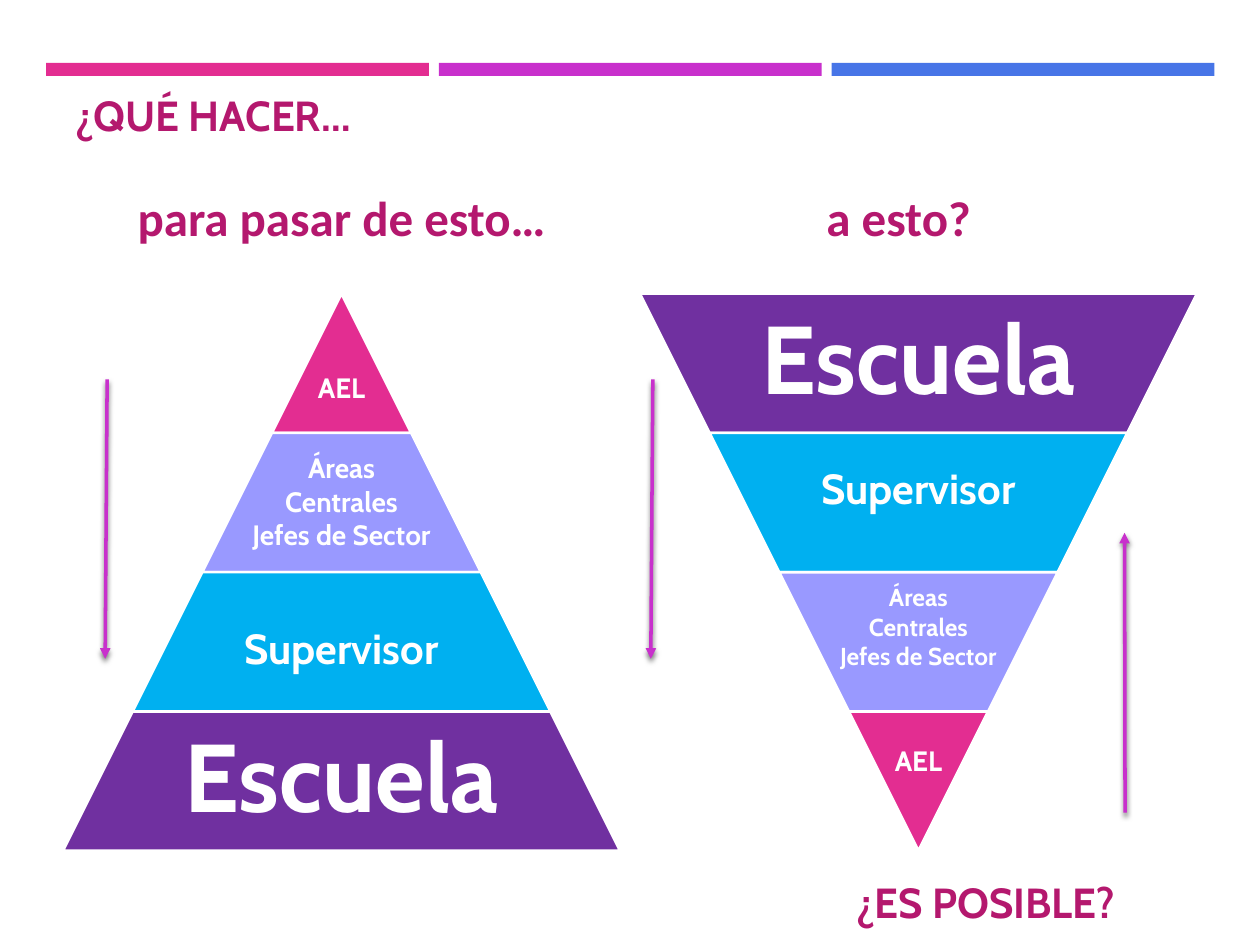
from dataclasses import dataclass
from lxml import etree
from pptx import Presentation
from pptx.dml.color import RGBColor
from pptx.enum.shapes import MSO_CONNECTOR, MSO_SHAPE
from pptx.enum.text import MSO_ANCHOR, PP_ALIGN
from pptx.oxml import parse_xml
from pptx.oxml.ns import qn
from pptx.util import Cm, Pt

RECT, TRAP = MSO_SHAPE.RECTANGLE, MSO_SHAPE.TRAPEZOID
STRAIGHT = MSO_CONNECTOR.STRAIGHT
TOP, MID, BASE = MSO_ANCHOR.TOP, MSO_ANCHOR.MIDDLE, MSO_ANCHOR.BOTTOM
LEFT, MIDST = PP_ALIGN.LEFT, PP_ALIGN.CENTER


@dataclass(frozen=True)
class Theme:
    pink: str = "E32D91"
    mauve: str = "C830CC"
    blue: str = "4775E7"
    lilac: str = "9999FF"
    sky: str = "00B0F0"
    plum: str = "7030A0"
    wine: str = "B4186E"
    white: str = "FFFFFF"
    font: str = "Cabin"
    alt: str = "Calibri"
    huge: int = 55
    head: int = 28
    title: int = 24
    body: int = 16
    small: int = 14


T = Theme()
AREAS = "Áreas\nCentrales\nJefes de Sector"
SHADOW = (
    '<a:effectLst xmlns:a="http://schemas.openxmlformats.org/drawingml/2006/main">'
    '<a:outerShdw blurRad="38100" dist="25400" dir="5400000" rotWithShape="0">'
    '<a:srgbClr val="000000"><a:alpha val="55000"/></a:srgbClr>'
    '</a:outerShdw></a:effectLst>'
)


def rgb(code):
    return RGBColor.from_string(code)


def add_text(slide, box, text, size, color, font=T.font,
             align=MIDST, anchor=TOP, lead=None):
    frame = slide.shapes.add_textbox(*map(Cm, box)).text_frame
    frame.word_wrap = True
    frame.vertical_anchor = anchor
    frame.text = text
    for para in frame.paragraphs:
        para.alignment = align
        para.line_spacing = lead
        for run in para.runs:
            run.font.size = Pt(size)
            run.font.name = font
            run.font.bold = True
            run.font.color.rgb = rgb(color)


def add_block(slide, kind, box, color):
    shape = slide.shapes.add_shape(kind, *map(Cm, box))
    shape.shadow.inherit = False
    shape.fill.solid()
    shape.fill.fore_color.rgb = rgb(color)
    shape.line.fill.background()
    return shape


def add_bars(slide, box):
    """Three equal bars across the top."""
    left, top, width, height = box
    gap = 0.2
    wide = (width - 2 * gap) / 3
    for i, color in enumerate((T.pink, T.mauve, T.blue)):
        add_block(slide, RECT, (left + i * (wide + gap), top, wide, height), color)


def add_pyramid(slide, box, tiers, flip=False):
    """Equal tiers from top to bottom; flip sets the point at the foot."""
    left, top, width, height = box
    count = len(tiers)
    step = height / count
    for i, (text, color, size, drop) in enumerate(tiers):
        wide = width * (count - i if flip else i + 1) / count
        y = top + i * step
        tier = add_block(slide, TRAP, (left + (width - wide) / 2, y, wide, step), color)
        tier.adjustments[0] = 0.5
        tier.rotation = 180 if flip else 0
        tier.line.color.rgb = rgb(T.white)
        tier.line.width = Pt(1.5)
        big = size == T.huge
        span = 7.3 if big else 5.18
        add_text(slide, (left + (width - span) / 2, y + drop, span, step - drop),
                 text, size, T.white, anchor=MID if big else TOP,
                 lead=0.9 if big else None)


def add_arrow(slide, start, end):
    line = slide.shapes.add_connector(STRAIGHT, *map(Cm, start + end))
    line.line.color.rgb = rgb(T.mauve)
    line.line.width = Pt(2)
    etree.SubElement(line.line._get_or_add_ln(), qn("a:tailEnd"), type="triangle")
    line._element.spPr.append(parse_xml(SHADOW))


def add_heads(slide, box):
    """Two side-by-side headings."""
    left, top, width, height = box
    half = width / 2
    for i, text in enumerate(("para pasar de esto…", "a esto?")):
        add_text(slide, (left + i * half, top, half, height), text,
                 T.head, T.wine, T.alt, anchor=BASE)


def main():
    deck = Presentation()
    deck.slide_width, deck.slide_height = Cm(25.4), Cm(19.05)
    slide = deck.slides.add_slide(deck.slide_layouts[6])

    # Top bars, question and headings
    add_bars(slide, (0.93, 1.27, 23.55, 0.26))
    add_text(slide, (1.27, 1.68, 8.2, 1.27), "¿QUÉ HACER…",
             T.title, T.wine, align=LEFT)
    add_heads(slide, (1.27, 3.2, 22.46, 1.9))

    # Pyramids: text, colour, size, label drop within the tier
    add_pyramid(slide, (1.27, 5.92, 11.23, 11.23), (
        ("AEL", T.pink, T.body, 1.42),
        (AREAS, T.lilac, T.body, 0.23),
        ("Supervisor", T.sky, T.title, 0.89),
        ("Escuela", T.plum, T.huge, 0),
    ))
    add_pyramid(slide, (12.9, 5.92, 11.23, 11.23), (
        ("Escuela", T.plum, T.huge, 0),
        ("Supervisor", T.sky, T.title, 0.48),
        (AREAS, T.lilac, T.small, 0.08),
        ("AEL", T.pink, T.body, 0.53),
    ), flip=True)

    # Arrows: down beside each pyramid, up at the far right
    for x in (2.16, 13.16):
        add_arrow(slide, (x, 7.65), (x - 0.04, 13.28))
    add_arrow(slide, (22.68, 16.38), (22.67, 10.74))

    # Closing question
    add_text(slide, (17.02, 17.55, 7.11, 1.27), "¿ES POSIBLE?",
             T.title, T.wine, align=LEFT)
    deck.save("out.pptx")


if __name__ == "__main__":
    main()
